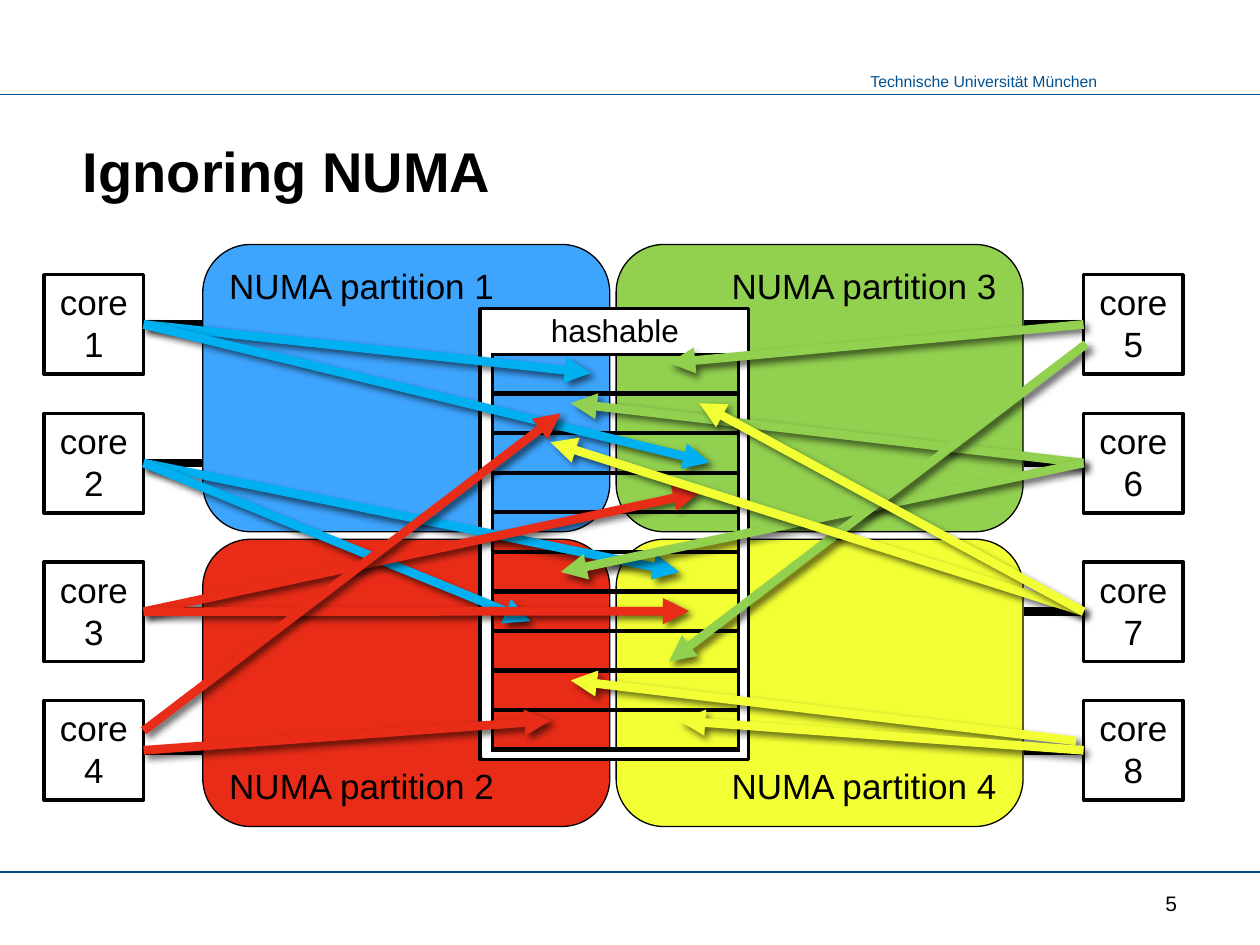
import pptx
import pptx.util
import pptx.dml.color
import pptx.enum.shapes
import pptx.enum.text
import pptx.oxml.ns
from lxml import etree

Inches = pptx.util.Inches
Pt = pptx.util.Pt
SHAPE = pptx.enum.shapes.MSO_SHAPE
ALIGN = pptx.enum.text.PP_ALIGN
ANCHOR = pptx.enum.text.MSO_ANCHOR
qn = pptx.oxml.ns.qn

BLACK, WHITE, NAVY = "000000", "FFFFFF", "005293"
BLUE, CYAN, GREEN, RED, YELLOW = "3EA5FF", "00B0F0", "92D050", "E82C18", "F2FF35"


def color(code):
    return pptx.dml.color.RGBColor.from_string(code)


def write(frame, text, size=20, bold=False, tint=BLACK, align=ALIGN.LEFT,
          anchor=ANCHOR.TOP, wrap=True, font="Arial"):
    frame.word_wrap = wrap
    frame.vertical_anchor = anchor
    par = frame.paragraphs[0]
    par.alignment = align
    run = par.add_run()
    run.text = text
    run.font.name, run.font.size, run.font.bold = font, Pt(size), bold
    run.font.color.rgb = color(tint)


def cast(parent):
    """Add a soft drop shadow to an effect list."""
    shade = etree.SubElement(parent, qn("a:outerShdw"), blurRad=str(Pt(4)),
                             dist=str(Pt(3)), dir="2700000", rotWithShape="0")
    tone = etree.SubElement(shade, qn("a:srgbClr"), val=BLACK)
    etree.SubElement(tone, qn("a:alpha"), val="60000")


class Board:
    def __init__(self, slide):
        self.shapes = slide.shapes

    def text(self, x, y, w, h, text, **style):
        box = self.shapes.add_textbox(*map(Inches, (x, y, w, h)))
        write(box.text_frame, text, **style)

    def box(self, x, y, w, h, fill=None, line=None, width=2, kind=SHAPE.RECTANGLE,
            text=None, **style):
        box = self.shapes.add_shape(kind, *map(Inches, (x, y, w, h)))
        box.shadow.inherit = False
        if fill:
            box.fill.solid()
            box.fill.fore_color.rgb = color(fill)
        else:
            box.fill.background()
        if line:
            box.line.color.rgb = color(line)
            box.line.width = Pt(width)
        else:
            box.line.fill.background()
        if text:
            write(box.text_frame, text, **style)
        return box

    def line(self, start, end, tint, width=5, arrow=False):
        """Draw a line; start is a point or a (shape, side) pair to join."""
        joint = None if isinstance(start[0], (int, float)) else start
        first = (0, 0) if joint else start
        line = self.shapes.add_connector(pptx.enum.shapes.MSO_CONNECTOR.STRAIGHT,
                                         *map(Inches, (*first, *end)))
        if joint:
            line.begin_connect(*joint)
        line.line.color.rgb = color(tint)
        line.line.width = Pt(width)
        props = line._element.spPr
        effects = etree.SubElement(props, qn("a:effectLst"))
        if arrow:
            etree.SubElement(props.find(qn("a:ln")), qn("a:tailEnd"), type="triangle")
            cast(effects)


def frame(board):
    board.text(6.81, 0.52, 2.01, 0.25, "Technische Universität München",
               size=9, tint=NAVY, wrap=False)
    for y in (6.92, 0.75):
        board.line((0, y), (10, y), NAVY, width=0.75)
    board.text(0.56, 1, 8.89, 0.67, "Ignoring NUMA", size=32, bold=True,
               anchor=ANCHOR.BOTTOM)
    board.text(7.36, 7, 2.08, 0.33, "5", size=12, align=ALIGN.RIGHT,
               anchor=ANCHOR.MIDDLE)


def areas(board):
    for i, fill in enumerate((BLUE, RED, GREEN, YELLOW)):
        col, row = divmod(i, 2)
        board.box(1.61 + 3.28 * col, 1.94 + 2.34 * row, 3.23, 2.28, fill, BLACK, 0.75,
                  SHAPE.ROUNDED_RECTANGLE, f"NUMA partition {i + 1}",
                  align=(ALIGN.LEFT, ALIGN.RIGHT)[col],
                  anchor=(ANCHOR.TOP, ANCHOR.BOTTOM)[row])


def table(board):
    board.box(3.82, 2.46, 2.12, 0.31, WHITE, text="hashable", size=18,
              align=ALIGN.CENTER, anchor=ANCHOR.MIDDLE)
    rows, height = 10, 3.14
    step = height / rows
    for i in range(rows):
        board.box(3.9, 2.81 + i * step, 1.97, step, line=BLACK, width=2.5)


def cores(board):
    """Draw the cores and return the inner (shape, side) joint of each."""
    joints = {}
    for col, (x, side) in enumerate(((0.35, 3), (8.6, 1))):
        for row, y in enumerate((2.18, 3.28, 4.46, 5.56)):
            num = 4 * col + row + 1
            core = board.box(x, y, 0.79, 0.79, WHITE, BLACK, text=f"core {num}",
                             align=ALIGN.CENTER)
            joints[num] = (core, side)
    for num, joint in joints.items():
        core = joint[0]
        mid = (core.top + core.height / 2) / Inches(1)
        board.line(joint, (1.61 if num < 5 else 8.13, mid), BLACK)
    return joints


def main():
    deck = pptx.Presentation()
    deck.slide_width, deck.slide_height = Inches(10), Inches(7.5)
    board = Board(deck.slides.add_slide(deck.slide_layouts[6]))

    frame(board)
    areas(board)
    table(board)
    core = cores(board)
    board.box(3.86, 2.77, 2.05, 3.23, line=WHITE, width=5)
    board.box(3.81, 2.45, 2.13, 3.58, line=BLACK)

    writes = (
        (CYAN, core[1], (4.69, 2.96)),
        (CYAN, core[1], (5.63, 3.67)),
        (CYAN, core[2], (5.39, 4.54)),
        (CYAN, core[2], (4.21, 4.93)),
        (RED, core[3], (5.55, 3.91)),
        (RED, core[3], (5.47, 4.85)),
        (RED, (1.14, 5.8), (4.45, 3.28)),
        (RED, core[4], (4.37, 5.72)),
        (GREEN, core[6], (4.53, 3.2)),
        (GREEN, core[6], (4.45, 4.54)),
        (GREEN, core[5], (5.31, 2.88)),
        (GREEN, (8.62, 2.73), (5.31, 5.25)),
        (YELLOW, core[7], (4.37, 3.51)),
        (YELLOW, (8.54, 5.88), (4.53, 5.4)),
        (YELLOW, core[7], (5.55, 3.2)),
        (YELLOW, core[8], (5.39, 5.72)),
    )
    for tint, start, end in writes:
        board.line(start, end, tint, arrow=True)

    deck.save("out.pptx")


if __name__ == "__main__":
    main()
